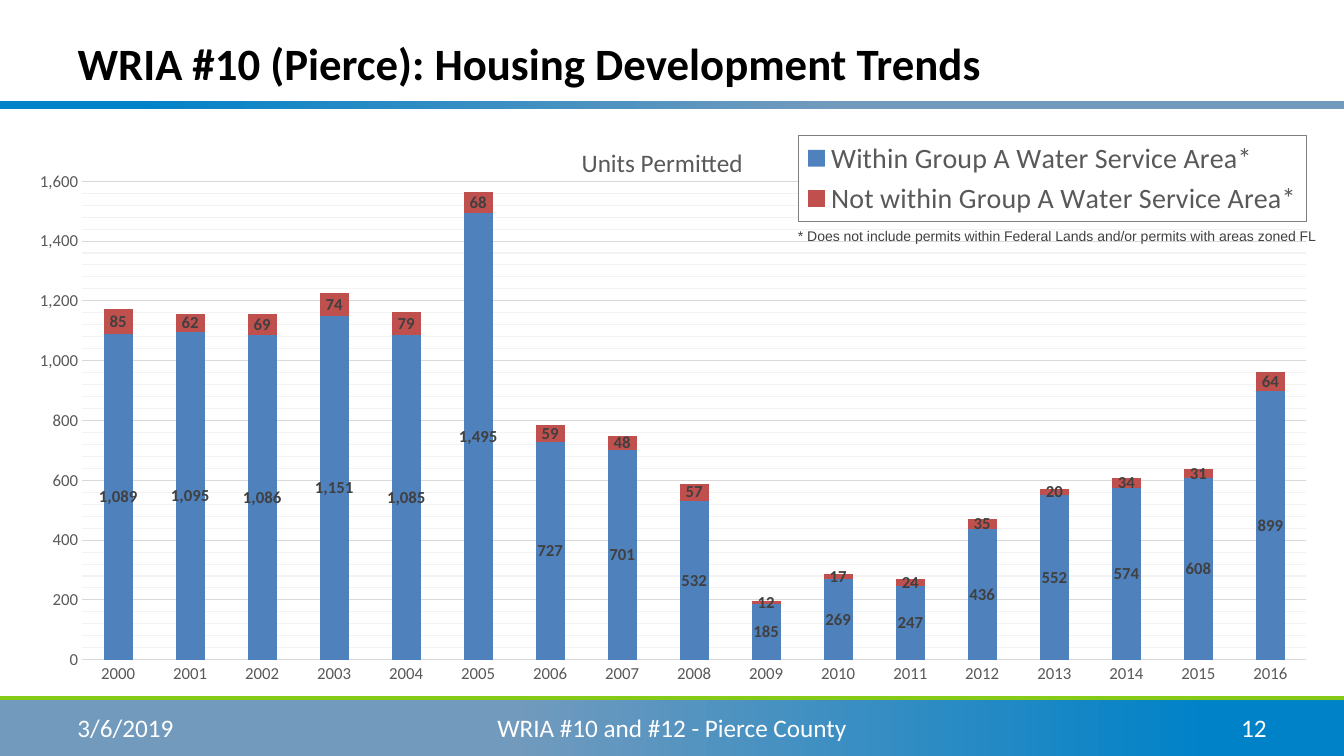
from lxml import etree
from pptx import Presentation
from pptx import util as u
from pptx.chart import data as cd
from pptx.dml.color import RGBColor
from pptx.enum import chart as ce, shapes, text
from pptx.oxml import parse_xml
from pptx.oxml.ns import nsdecls, qn

COLORS = {
    "steel": "729ABD", "ocean": "0082C8", "green": "86CA18",
    "within": "4F81BD", "outside": "C0504D", "label": "404040",
    "axis": "595959", "grid": "D9D9D9", "minor": "F2F2F2",
    "frame": "7F7F7F", "black": "000000", "white": "FFFFFF",
}
W, H = 33.87, 19.05
YEARS = [str(y) for y in range(2000, 2017)]
WITHIN = [1089, 1095, 1086, 1151, 1085, 1495, 727, 701, 532,
          185, 269, 247, 436, 552, 574, 608, 899]
OUTSIDE = [85, 62, 69, 74, 79, 68, 59, 48, 57, 12, 17, 24, 35, 20, 34, 31, 64]


def rgb(name):
    return RGBColor.from_string(COLORS[name])


def set_font(font, size, color, bold=False, name="Calibri"):
    font.size, font.bold, font.name = u.Pt(size), bold, name
    font.color.rgb = rgb(color)


def add_text(s, box, words, size, color, align=text.PP_ALIGN.LEFT,
             name="Calibri", wrap=True):
    tf = s.shapes.add_textbox(*map(u.Cm, box)).text_frame
    tf.word_wrap = wrap
    tf.vertical_anchor = text.MSO_ANCHOR.MIDDLE
    p = tf.paragraphs[0]
    p.alignment = align
    r = p.add_run()
    r.text = words
    set_font(r.font, size, color, name=name)


def add_band(s, box, stops):
    sp = s.shapes.add_shape(shapes.MSO_SHAPE.RECTANGLE, *map(u.Cm, box))
    sp.shadow.inherit = False
    sp.line.fill.background()
    sp.fill.gradient()
    sp.fill.gradient_angle = 0
    for stop, (position, color) in zip(sp.fill.gradient_stops, stops):
        stop.position = position
        stop.color.rgb = rgb(color)


def add_header(s, box):
    x, y, w, h = box
    # Rule under the title
    add_band(s, (x, y + 2.54, w, 0.2), [(0.1, "ocean"), (0.62, "steel")])
    # Title
    title = s.shapes.title
    title.left, title.top, title.width, title.height = map(
        u.Cm, (x + 1.7, y, w - 3.39, h))
    tf = title.text_frame
    tf.vertical_anchor = text.MSO_ANCHOR.MIDDLE
    p = tf.paragraphs[0]
    p.alignment = text.PP_ALIGN.LEFT
    r = p.add_run()
    r.text = "WRIA #10 (Pierce): Housing Development Trends"
    set_font(r.font, 32, "black", bold=True)


def add_footer(s, box):
    x, y, w, h = box
    add_band(s, box, [(0.38, "steel"), (0.9, "ocean")])
    # Green edge
    line = s.shapes.add_connector(shapes.MSO_CONNECTOR.STRAIGHT,
                                  *map(u.Cm, (x, y, x + w, y)))
    line.line.color.rgb = rgb("green")
    line.line.width = u.Pt(3)
    etree.SubElement(line._element.spPr, qn("a:effectLst"))
    # Date, subject and page number
    side, margin, top = 7.9, 1.7, y + 0.25
    for left, width, words, align in (
            (x + margin, side, "3/6/2019", text.PP_ALIGN.LEFT),
            (x, w, "WRIA #10 and #12 - Pierce County", text.PP_ALIGN.CENTER),
            (x + w - margin - side, side, "12", text.PP_ALIGN.RIGHT)):
        add_text(s, (left, top, width, 1.02), words, 18, "white", align)


def set_layout(parent, after, inner=False, **places):
    """Place a chart part by fractions of the chart's size."""
    for old in parent.findall(qn("c:layout")):
        parent.remove(old)
    target = '<c:layoutTarget val="inner"/>' if inner else ""
    modes = "".join(f'<c:{k}Mode val="edge"/>' for k in "xy")
    values = "".join(f'<c:{k} val="{v}"/>' for k, v in places.items())
    layout = parse_xml(f'<c:layout {nsdecls("c")}><c:manualLayout>{target}'
                       f'{modes}{values}</c:manualLayout></c:layout>')
    if after:
        parent.find(qn(after)).addnext(layout)
    else:
        parent.insert(0, layout)


def outline_xml(color):
    return (f'<a:ln w="9525"><a:solidFill><a:srgbClr val="{COLORS[color]}"/>'
            '</a:solidFill></a:ln>')


def style_axes(chart):
    cat, val = chart.category_axis, chart.value_axis
    for axis in (cat, val):
        set_font(axis.tick_labels.font, 12, "axis")
        axis.major_tick_mark = axis.minor_tick_mark = ce.XL_TICK_MARK.NONE
    cat.format.line.color.rgb = rgb("grid")
    cat.format.line.width = u.Pt(0.75)
    val.format.line.fill.background()
    val.minimum_scale, val.maximum_scale = 0, 1600
    val.major_unit, val.minor_unit = 200, 40
    val.tick_labels.number_format = "#,##0"
    val.tick_labels.number_format_is_linked = False
    val.has_major_gridlines = val.has_minor_gridlines = True
    val.major_gridlines.format.line.color.rgb = rgb("grid")
    val.major_gridlines.format.line.width = u.Pt(0.75)
    val._element.find(qn("c:minorGridlines")).append(parse_xml(
        f'<c:spPr {nsdecls("c", "a")}>{outline_xml("minor")}</c:spPr>'))


def style_legend(chart):
    chart.has_legend = True
    legend = chart.legend
    legend.position = ce.XL_LEGEND_POSITION.BOTTOM
    legend.include_in_layout = False
    set_font(legend.font, 20, "axis")
    el = legend._element
    set_layout(el, "c:legendPos", x=0.6, y=0.03, w=0.39, h=0.15)
    el.find(qn("c:overlay")).addnext(parse_xml(
        f'<c:spPr {nsdecls("c", "a")}><a:solidFill>'
        f'<a:srgbClr val="{COLORS["white"]}"/></a:solidFill>'
        f'{outline_xml("frame")}</c:spPr>'))


def add_permit_chart(s, box):
    data = cd.CategoryChartData(number_format="#,##0")
    data.categories = YEARS
    data.add_series("Within Group A Water Service Area*", WITHIN)
    data.add_series("Not within Group A Water Service Area*", OUTSIDE)
    chart = s.shapes.add_chart(ce.XL_CHART_TYPE.COLUMN_STACKED,
                               *map(u.Cm, box), data).chart
    set_font(chart.font, 10, "black")
    # Chart title
    chart.has_title = True
    title = chart.chart_title
    r = title.text_frame.paragraphs[0].add_run()
    r.text = "Units Permitted"
    set_font(r.font, 18, "axis")
    set_layout(title._element, "c:tx", x=0.43, y=0.04)
    # Columns and their values
    plot = chart.plots[0]
    plot.gap_width, plot.overlap = 150, 100
    plot.vary_by_categories = False
    for series, color in zip(plot.series, ("within", "outside")):
        series.format.fill.solid()
        series.format.fill.fore_color.rgb = rgb(color)
        labels = series.data_labels
        labels.show_value = True
        labels.position = ce.XL_LABEL_POSITION.CENTER
        set_font(labels.font, 12, "label", bold=True)
    style_axes(chart)
    style_legend(chart)
    set_layout(chart._chartSpace.chart.plotArea, None, inner=True,
               x=0.05, y=0.11, w=0.94, h=0.83)
    # Footnote under the legend
    x, y = box[:2]
    add_text(s, (x + 19.43, y + 2.62, 13.59, 0.69),
             "* Does not include permits within Federal Lands and/or "
             "permits with areas zoned FL", 10, "label", name="Arial",
             wrap=False)


def main():
    prs = Presentation()
    prs.slide_width, prs.slide_height = u.Cm(W), u.Cm(H)
    s = prs.slides.add_slide(prs.slide_layouts[5])
    add_header(s, (0, 0, W, 3.18))
    add_footer(s, (0, 17.58, W, 1.47))
    add_permit_chart(s, (0.43, 2.97, 32.82, 14.53))
    prs.save("out.pptx")


if __name__ == "__main__":
    main()
